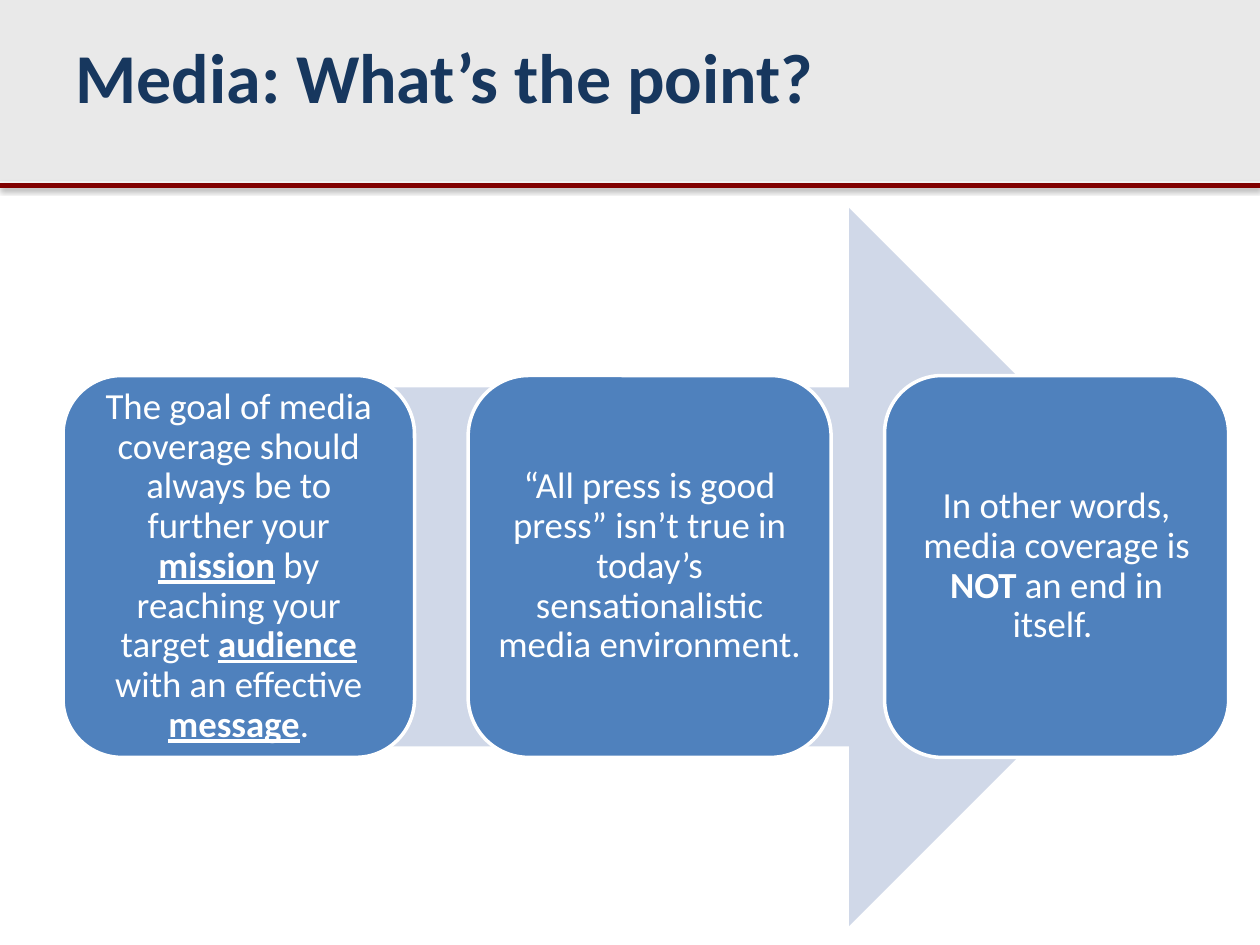
"""Build the slide on the purpose of media coverage."""
from dataclasses import dataclass

from lxml import etree
from pptx import Presentation
from pptx.dml.color import RGBColor
from pptx.enum import shapes, text
from pptx.oxml import ns
from pptx.util import Pt

FONT = "Calibri"
WHITE = "FFFFFF"
MARGIN = 36
CARD_GAP = 30.6
CARD_TOP = 214.6
CARD_HEIGHT = 218.2


@dataclass
class Phrase:
    words: str
    bold: bool = False
    underline: bool = False


@dataclass
class Card:
    width: float
    phrases: list[Phrase]


CARDS = [
    Card(200.9, [
        Phrase("The goal of media coverage should always be to further your "),
        Phrase("mission", True, True),
        Phrase(" by reaching your target "),
        Phrase("audience", True, True),
        Phrase(" with an effective "),
        Phrase("message", True, True),
        Phrase("."),
    ]),
    Card(207.4, [
        Phrase("“All press is good press” isn’t true in today’s "
               "sensationalistic media environment."),
    ]),
    Card(196.6, [
        Phrase("In other words, media coverage is "),
        Phrase("NOT ", True),
        Phrase("an end in itself. "),
    ]),
]


def color(value: str) -> RGBColor:
    return RGBColor.from_string(value)


def style_font(font, size: float, value: str) -> None:
    font.name = FONT
    font.size = Pt(size)
    font.color.rgb = color(value)


def add_filled(slide, kind, left: float, top: float, width: float,
               height: float, fill: str):
    shape = slide.shapes.add_shape(kind, Pt(left), Pt(top), Pt(width), Pt(height))
    shape.shadow.inherit = False
    shape.fill.solid()
    shape.fill.fore_color.rgb = color(fill)
    shape.line.fill.background()
    return shape


def add_rule(slide, top: float, width: float) -> None:
    rule = slide.shapes.add_connector(
        shapes.MSO_CONNECTOR.STRAIGHT, 0, Pt(top), Pt(width), Pt(top))
    rule.line.color.rgb = color("800000")
    rule.line.width = Pt(3)
    effects = etree.SubElement(rule._element.spPr, ns.qn("a:effectLst"))
    shadow = etree.SubElement(
        effects, ns.qn("a:outerShdw"), blurRad=str(Pt(3.1)), dist=str(Pt(1.6)),
        dir="5400000", rotWithShape="0")
    tint = etree.SubElement(shadow, ns.qn("a:srgbClr"), val="000000")
    etree.SubElement(tint, ns.qn("a:alpha"), val="38000")


def add_title(slide, words: str) -> None:
    title = slide.shapes.title
    title.left, title.top, title.width, title.height = (
        Pt(MARGIN), Pt(15.8), Pt(648), Pt(90))
    frame = title.text_frame
    frame.text = words
    frame.vertical_anchor = text.MSO_ANCHOR.TOP
    paragraph = frame.paragraphs[0]
    paragraph.alignment = text.PP_ALIGN.LEFT
    style_font(paragraph.font, 40, "17375E")
    paragraph.font.bold = True
    slide.shapes._spTree.append(title._element)


def add_card(slide, card: Card, left: float) -> None:
    shape = add_filled(slide, shapes.MSO_SHAPE.ROUNDED_RECTANGLE, left,
                       CARD_TOP, card.width, CARD_HEIGHT, "4F81BD")
    shape.line.color.rgb = color(WHITE)
    shape.line.width = Pt(2)
    frame = shape.text_frame
    frame.word_wrap = True
    frame.vertical_anchor = text.MSO_ANCHOR.MIDDLE
    frame.margin_left = frame.margin_right = Pt(6.3)
    frame.margin_top = frame.margin_bottom = Pt(6.3)
    paragraph = frame.paragraphs[0]
    paragraph.alignment = text.PP_ALIGN.CENTER
    paragraph.line_spacing = 0.9
    style_font(paragraph.font, 21, WHITE)
    for phrase in card.phrases:
        run = paragraph.add_run()
        run.text = phrase.words
        style_font(run.font, 21, WHITE)
        run.font.bold = phrase.bold
        run.font.underline = phrase.underline


def main() -> None:
    presentation = Presentation()
    presentation.slide_width, presentation.slide_height = Pt(720), Pt(540)
    slide = presentation.slides.add_slide(presentation.slide_layouts[5])
    add_filled(slide, shapes.MSO_SHAPE.RECTANGLE, 0, 0, 720, 103.7, "E9E9E9")
    add_rule(slide, 105.8, 720)
    add_title(slide, "Media: What’s the point?")
    add_filled(slide, shapes.MSO_SHAPE.RIGHT_ARROW, 48.2, 118.8, 642.2, 410.4, "D0D8E8")
    left = MARGIN
    for card in CARDS:
        add_card(slide, card, left)
        left += card.width + CARD_GAP
    presentation.save("out.pptx")


if __name__ == "__main__":
    main()
